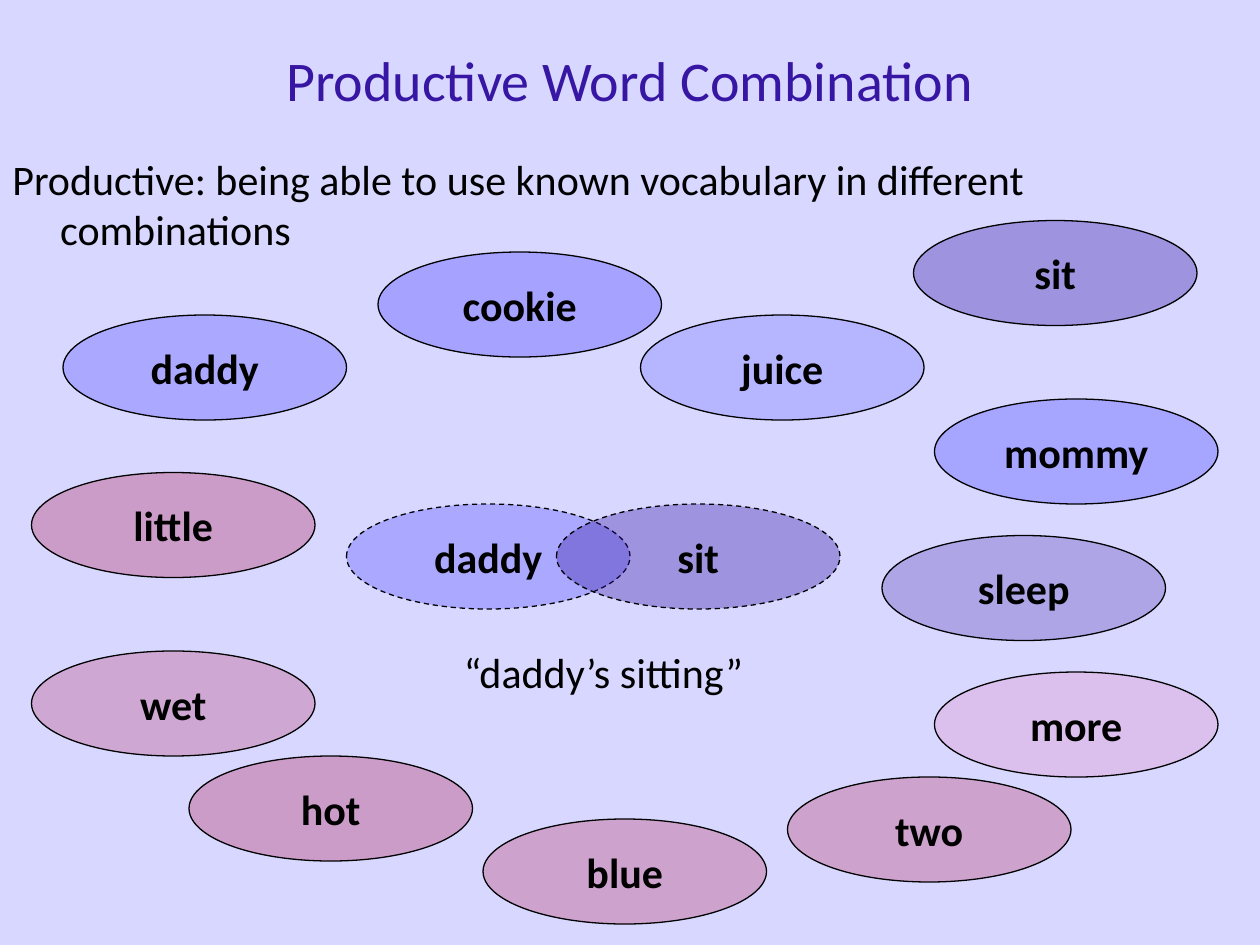
"""Build the slide on productive word combination."""
from lxml import etree
from pptx import Presentation, util as u
from pptx.dml.color import RGBColor
from pptx.enum import dml, shapes, text
from pptx.oxml.ns import qn

COLORS = {"back": "D7D7FF", "title": "3616A2", "ink": "000000", "noun": "1711FF",
          "adjective": "B52254", "more": "F0498F", "verb": "3616A2"}
COLS, ROWS = 120, 90
OVAL_W, OVAL_H = 27, 10

prs = Presentation()
prs.slide_width, prs.slide_height = u.Inches(10), u.Inches(7.5)
s = prs.slides.add_slide(prs.slide_layouts[6])
s.background.fill.solid()
s.background.fill.fore_color.rgb = RGBColor.from_string(COLORS["back"])


def grid(x, y, w, h):
    cw, rh = prs.slide_width / COLS, prs.slide_height / ROWS
    return round(x * cw), round(y * rh), round(w * cw), round(h * rh)


def write(sp, words, size=24, color="ink", bold=False, align=text.PP_ALIGN.CENTER,
          anchor=text.MSO_ANCHOR.MIDDLE, wrap=False):
    tf = sp.text_frame
    tf.word_wrap, tf.vertical_anchor = wrap, anchor
    p = tf.paragraphs[0]
    p.text, p.alignment = words, align
    p.font.name, p.font.size, p.font.bold = "Calibri", u.Pt(size), bold
    p.font.color.rgb = RGBColor.from_string(COLORS[color])
    return p


title = s.shapes.add_textbox(*grid(9, 0, 102, 15))
write(title, "Productive Word Combination", size=32, color="title", wrap=True)

definition = s.shapes.add_textbox(*grid(0, 14, 120, 12))
p = write(definition,
          "Productive: being able to use known vocabulary in different combinations",
          align=text.PP_ALIGN.LEFT, anchor=text.MSO_ANCHOR.TOP, wrap=True)
pPr = p._p.get_or_add_pPr()
pPr.set("marL", str(u.Inches(0.38)))
pPr.set("indent", str(-u.Inches(0.38)))

phrase = s.shapes.add_textbox(*grid(43, 61, 30.5, 6))
write(phrase, "“daddy’s sitting”", align=text.PP_ALIGN.LEFT, anchor=text.MSO_ANCHOR.TOP)

ovals = [
    ("daddy", 6, 30, "noun", 23, False),
    ("cookie", 36, 24, "noun", 26, False),
    ("juice", 61, 30, "noun", 17, False),
    ("mommy", 89, 38, "noun", 25, False),
    ("little", 3, 45, "adjective", 32, False),
    ("wet", 3, 62, "adjective", 26, False),
    ("hot", 18, 72, "adjective", 32, False),
    ("blue", 46, 78, "adjective", 29, False),
    ("two", 75, 74, "adjective", 29, False),
    ("more", 89, 64, "more", 17, False),
    ("sit", 87, 21, "verb", 35, False),
    ("sleep", 84, 51, "verb", 26, False),
    ("daddy", 33, 48, "noun", 23, True),
    ("sit", 53, 48, "verb", 35, True),
]
for word, x, y, color, opacity, dashed in ovals:
    sp = s.shapes.add_shape(shapes.MSO_SHAPE.OVAL, *grid(x, y, OVAL_W, OVAL_H))
    sp.shadow.inherit = False
    sp.fill.solid()
    sp.fill.fore_color.rgb = RGBColor.from_string(COLORS[color])
    rgb = sp._element.spPr.find(qn("a:solidFill")).find(qn("a:srgbClr"))
    etree.SubElement(rgb, qn("a:alpha")).set("val", str(opacity * 1000))
    sp.line.color.rgb = RGBColor.from_string(COLORS["ink"])
    sp.line.width = u.Pt(0.75)
    if dashed:
        sp.line.dash_style = dml.MSO_LINE.DASH
    write(sp, word, bold=True)

prs.save("out.pptx")
